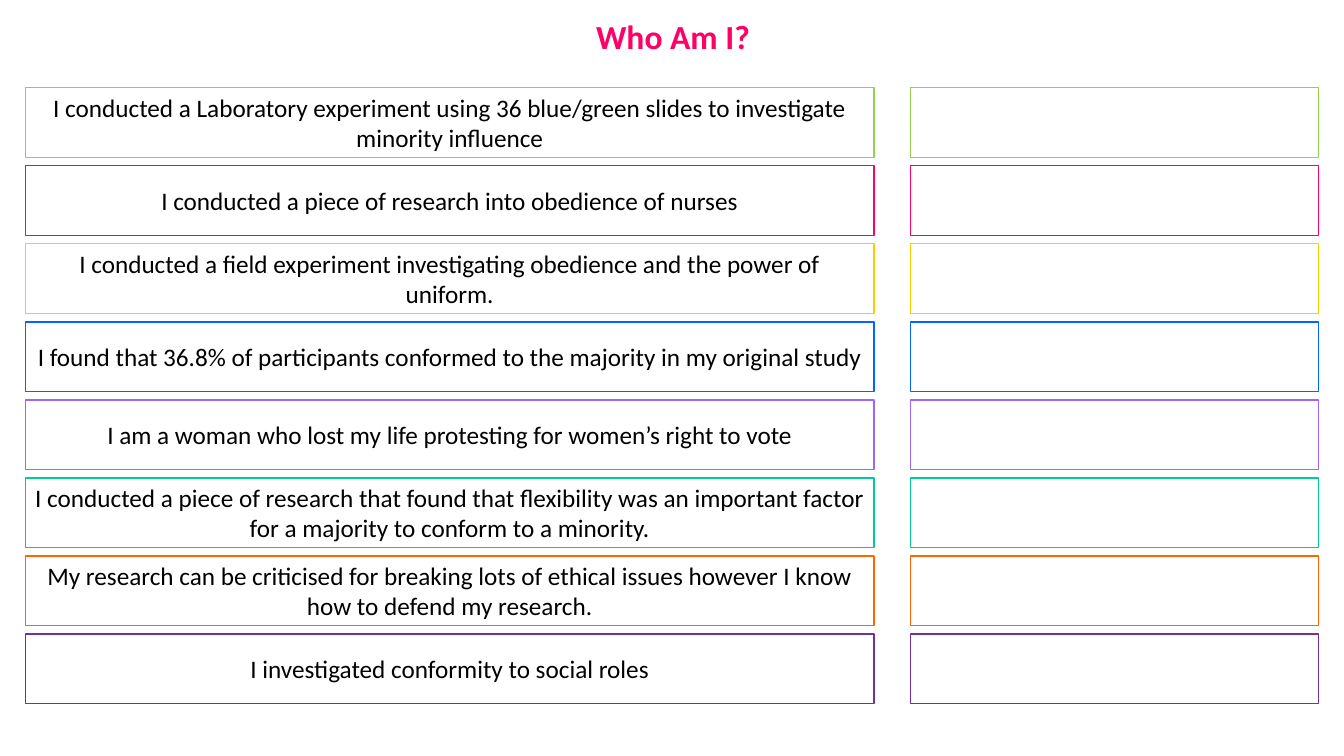
from dataclasses import dataclass

from pptx import Presentation
from pptx.dml.color import RGBColor
from pptx.enum.shapes import MSO_SHAPE
from pptx.enum.text import MSO_ANCHOR, PP_ALIGN
from pptx.util import Inches, Pt


@dataclass(frozen=True)
class Theme:
    """Colours, type and line sizes of the slide."""
    font: str = "Calibri"
    title_size: int = 24
    body_size: int = 18
    line_width: int = 1
    title: str = "FF0066"
    text: str = "000000"
    box: str = "FFFFFF"


@dataclass(frozen=True)
class Grid:
    """Clue and answer columns over evenly spaced rows, in inches."""
    clue_left: float = 0.25
    clue_width: float = 8.42
    answer_left: float = 9.03
    answer_width: float = 4.05
    first_top: float = 0.87
    last_top: float = 6.29
    row_height: float = 0.69

    def row_top(self, row, count):
        """Return the top of a row."""
        return self.first_top + row * (self.last_top - self.first_top) / (count - 1)


THEME = Theme()
GRID = Grid()
CLUES = [
    ("92D050", "I conducted a Laboratory experiment using 36 blue/green slides to investigate minority influence"),
    ("FF0066", "I conducted a piece of research into obedience of nurses"),
    ("FFCC00", "I conducted a field experiment investigating obedience and the power of uniform."),
    ("0066FF", "I found that 36.8% of participants conformed to the majority in my original study"),
    ("9966FF", "I am a woman who lost my life protesting for women’s right to vote"),
    ("00CC99", "I conducted a piece of research that found that flexibility was an important factor "
               "for a majority to conform to a minority."),
    ("FF6600", "My research can be criticised for breaking lots of ethical issues however I know "
               "how to defend my research."),
    ("7030A0", "I investigated conformity to social roles"),
]


def write_text(shape, text, size, color, anchor, bold=False):
    """Write one centred, wrapped run into a shape."""
    frame = shape.text_frame
    frame.word_wrap = True
    frame.vertical_anchor = anchor
    paragraph = frame.paragraphs[0]
    paragraph.alignment = PP_ALIGN.CENTER
    run = paragraph.add_run()
    run.text = text
    run.font.name = THEME.font
    run.font.size = Pt(size)
    run.font.bold = bold
    run.font.color.rgb = RGBColor.from_string(color)


def add_title(slide, text):
    """Place and format the slide title."""
    title = slide.shapes.title
    title.left, title.top = Inches(0.27), Inches(0.11)
    title.width, title.height = Inches(12.81), Inches(0.5)
    write_text(title, text, THEME.title_size, THEME.title, MSO_ANCHOR.TOP, bold=True)


def add_box(slide, left, top, width, line_color):
    """Add an outlined box one row high."""
    shape = slide.shapes.add_shape(
        MSO_SHAPE.RECTANGLE, Inches(left), Inches(top), Inches(width), Inches(GRID.row_height))
    shape.shadow.inherit = False
    shape.fill.solid()
    shape.fill.fore_color.rgb = RGBColor.from_string(THEME.box)
    shape.line.color.rgb = RGBColor.from_string(line_color)
    shape.line.width = Pt(THEME.line_width)
    return shape


def main():
    """Build the quiz slide and save it."""
    presentation = Presentation()
    presentation.slide_width = Inches(13.33)
    presentation.slide_height = Inches(7.5)
    slide = presentation.slides.add_slide(presentation.slide_layouts.get_by_name("Title Only"))
    add_title(slide, "Who Am I?")
    for row, (color, clue) in enumerate(CLUES):
        top = GRID.row_top(row, len(CLUES))
        clue_box = add_box(slide, GRID.clue_left, top, GRID.clue_width, color)
        write_text(clue_box, clue, THEME.body_size, THEME.text, MSO_ANCHOR.MIDDLE)
        add_box(slide, GRID.answer_left, top, GRID.answer_width, color)
    presentation.save("out.pptx")


if __name__ == "__main__":
    main()
